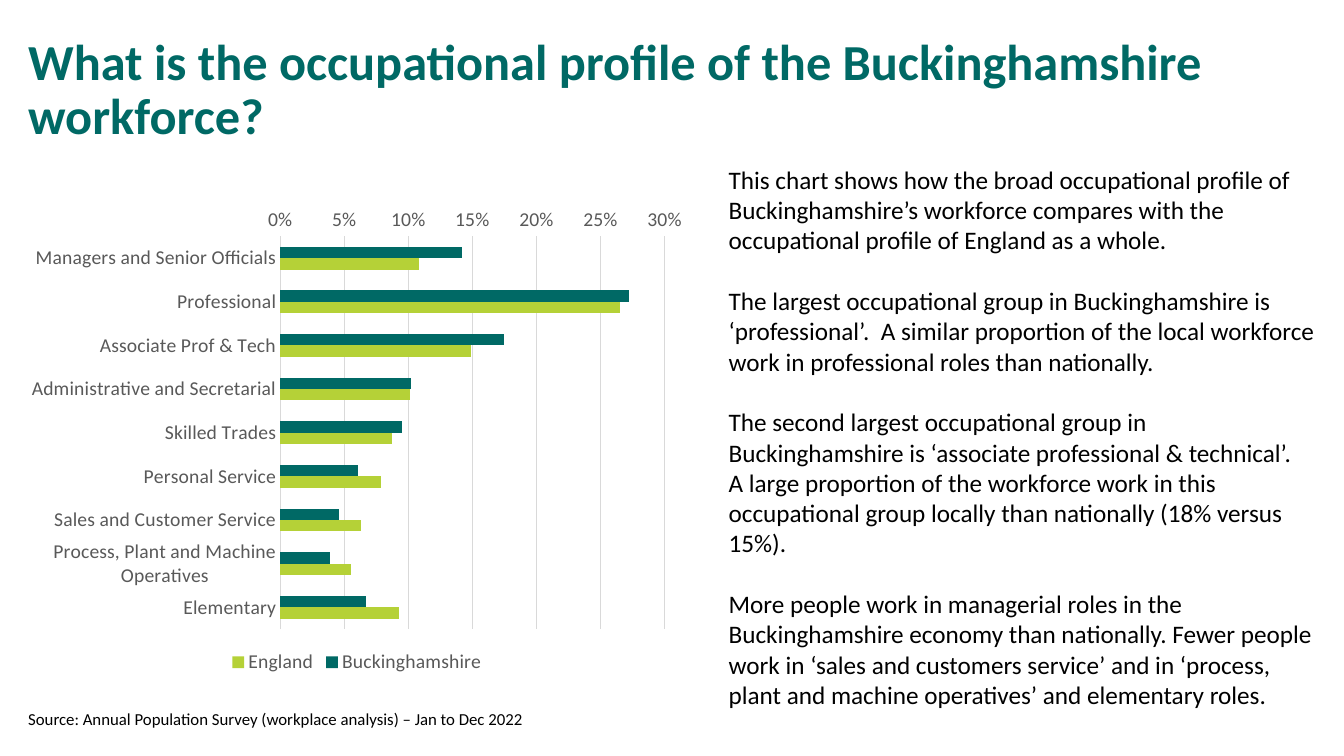
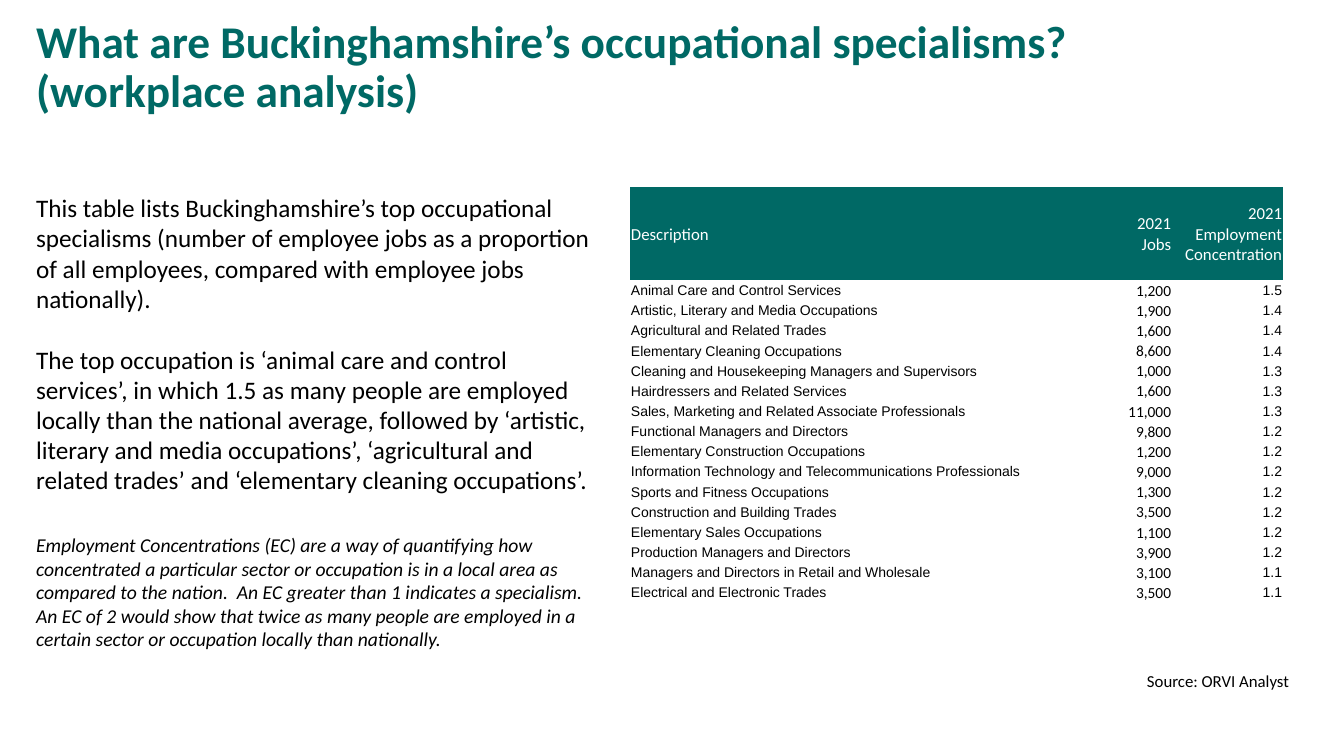
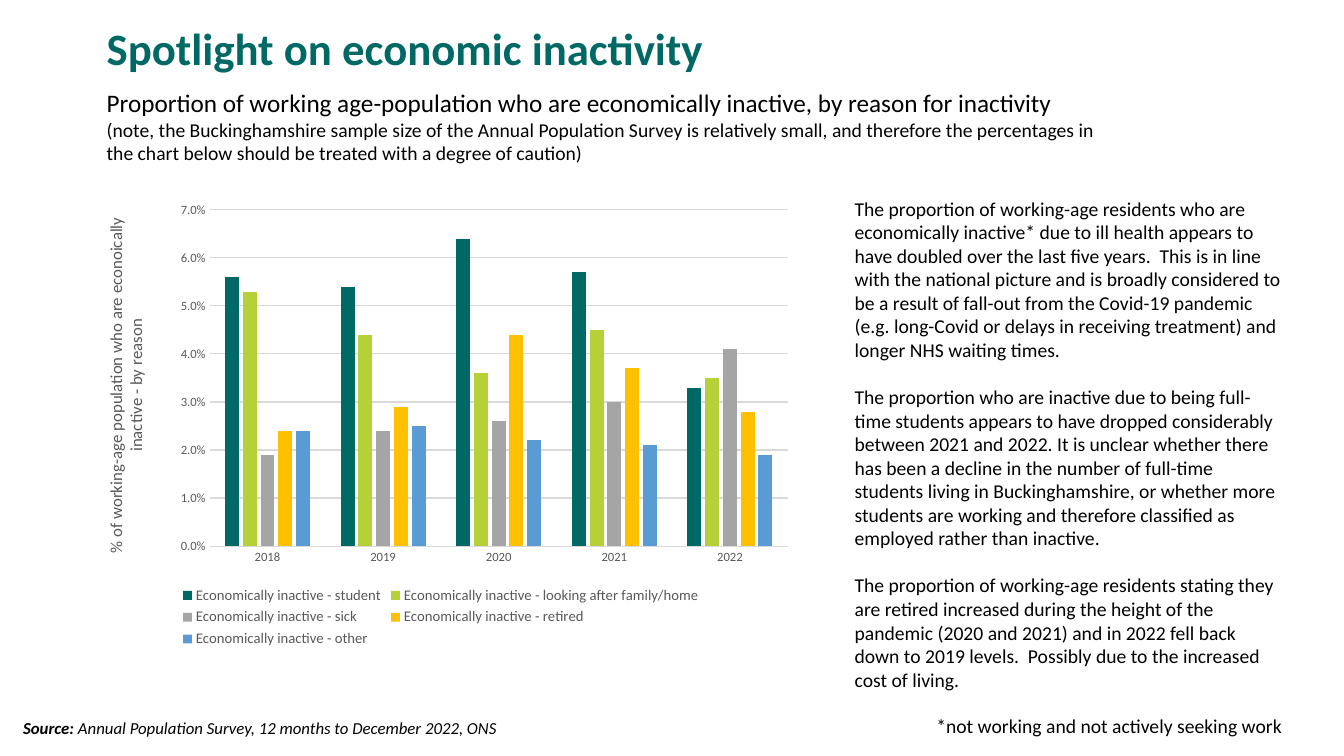
from lxml import etree
from pptx import Presentation
from pptx.chart.data import CategoryChartData
from pptx.dml.color import RGBColor
from pptx.enum import chart as charts, text
from pptx.util import Pt

TEAL, LIME, GREY, AMBER, BLUE = "006965", "B5D137", "A5A5A5", "FFC000", "5B9BD5"
BLACK, WHITE, LABEL, RULE = "000000", "FFFFFF", "595959", "D9D9D9"
FONT, TABLE_FONT = "Calibri", "Arial"
NO_STYLE = "{2D5ABB26-0587-4C30-8999-92F81FD0307C}"
CHART_NS = "http://schemas.openxmlformats.org/drawingml/2006/chart"


def colour(value):
    return RGBColor.from_string(value)


def style_font(font, size, shade=BLACK, name=FONT, bold=False, italic=False):
    font.size, font.name, font.bold, font.italic = Pt(size), name, bold, italic
    font.color.rgb = colour(shade)


def add_span(para, words, size, **style):
    span = para.add_run()
    span.text = words
    style_font(span.font, size, **style)


# Text regions
def add_text(page, box, paras, size, gap=0, spacing=None, anchor=text.MSO_ANCHOR.TOP, **style):
    """Each paragraph is a list of (words, style changes) spans."""
    frame = page.shapes.add_textbox(*map(Pt, box)).text_frame
    frame.word_wrap, frame.vertical_anchor = True, anchor
    for number, spans in enumerate(paras):
        para = frame.paragraphs[0] if number == 0 else frame.add_paragraph()
        para.space_before = Pt(gap if number else 0)
        if spacing:
            para.line_spacing = spacing
        for words, changes in spans:
            add_span(para, words, **{"size": size, **style, **changes})
    return frame


def add_body(page, box, paras, size, **style):
    add_text(page, box, [[(words, {})] for words in paras], size, gap=1.21 * size, **style)


def add_title(page, box, lines, size):
    frame = add_text(page, box, [[(lines[0], {})]], size, spacing=0.9,
                     anchor=text.MSO_ANCHOR.MIDDLE, shade=TEAL, bold=True)
    for line in lines[1:]:
        para = frame.paragraphs[0]
        para.add_line_break()
        add_span(para, line, size, shade=TEAL, bold=True)


# Chart region
def set_layout(parent, index, **places):
    """Place a chart part by fractions of the chart area."""
    for old in parent.findall(f"{{{CHART_NS}}}layout"):
        parent.remove(old)
    layout = etree.Element(f"{{{CHART_NS}}}layout")
    manual = etree.SubElement(layout, f"{{{CHART_NS}}}manualLayout")
    for tag, value in places.items():
        etree.SubElement(manual, f"{{{CHART_NS}}}{tag}", val=str(value))
    parent.insert(index, layout)


def add_bars(page, box, kind, categories, series, top, step, number_format,
             label_size, legend_size, gap, overlap=None):
    data = CategoryChartData(number_format=number_format)
    data.categories = categories
    for name, values, _ in series:
        data.add_series(name, values)
    chart = page.shapes.add_chart(kind, *map(Pt, box), data).chart
    style_font(chart.font, label_size)
    chart.has_title = False
    chart.has_legend = True
    chart.legend.position = charts.XL_LEGEND_POSITION.BOTTOM
    chart.legend.include_in_layout = False
    style_font(chart.legend.font, legend_size, LABEL)

    plot = chart.plots[0]
    plot.vary_by_categories, plot.gap_width = False, gap
    if overlap is not None:
        plot.overlap = overlap
    for bars, (_, _, shade) in zip(plot.series, series):
        bars.format.fill.solid()
        bars.format.fill.fore_color.rgb = colour(shade)
        bars.invert_if_negative = False

    for axis in (chart.category_axis, chart.value_axis):
        axis.major_tick_mark = axis.minor_tick_mark = charts.XL_TICK_MARK.NONE
        style_font(axis.tick_labels.font, label_size, LABEL)
    values_axis = chart.value_axis
    values_axis.minimum_scale, values_axis.maximum_scale = 0, top
    values_axis.major_unit = step
    values_axis.tick_labels.number_format = number_format
    values_axis.tick_labels.number_format_is_linked = False
    values_axis.format.line.fill.background()
    for line in (chart.category_axis.format.line, values_axis.major_gridlines.format.line):
        line.color.rgb, line.width = colour(RULE), Pt(0.75)
    return chart


def add_axis_title(chart, words):
    frame = chart.value_axis.axis_title.text_frame
    add_span(frame.paragraphs[0], words, 12, shade=LABEL)
    title = chart.element.xpath(".//c:valAx/c:title")[0]
    turn = title.xpath(".//a:bodyPr")[0]
    turn.set("rot", "-5400000")
    turn.set("vert", "horz")
    set_layout(title, 1, xMode="edge", yMode="edge", x=0.03, y=0.05)
    set_layout(chart.element.xpath(".//c:plotArea")[0], 0, layoutTarget="inner",
               xMode="edge", yMode="edge", x=0.18, y=0.04, w=0.8, h=0.73)


# Table region
def add_jobs_table(page, box, header, rows):
    left, top, width, height = box
    frame = page.shapes.add_table(len(rows) + 1, len(header), *map(Pt, box))
    frame.element.xpath(".//a:tableStyleId")[0].text = NO_STYLE
    table = frame.table
    table.first_row = table.horz_banding = False
    number_widths = (48.2, 79.2)
    for column, size in zip(table.columns, (width - sum(number_widths), *number_widths)):
        column.width = Pt(size)
    row_height = 14.4
    for number, values in enumerate((header, *rows)):
        table.rows[number].height = Pt(row_height if number else height - row_height * len(rows))
        for place, words in enumerate(values):
            cell = table.cell(number, place)
            cell.margin_left = cell.margin_right = cell.margin_top = Pt(0.72)
            cell.margin_bottom = 0
            cell.vertical_anchor = text.MSO_ANCHOR.MIDDLE
            para = cell.text_frame.paragraphs[0]
            if place:
                para.alignment = text.PP_ALIGN.RIGHT
            if number == 0:
                cell.fill.solid()
                cell.fill.fore_color.rgb = colour(TEAL)
                add_span(para, words, 12, shade=WHITE)
                continue
            cell.fill.background()
            if place == 1:
                cell.vertical_anchor = text.MSO_ANCHOR.BOTTOM
                add_span(para, words, 11)
            else:
                add_span(para, words, 10, name=TABLE_FONT)


# Slides
def build_profile(page):
    add_title(page, (13, 13, 929, 104.4),
              ["What is the occupational profile of the Buckinghamshire workforce?"], 36)
    groups = ["Managers and Senior Officials", "Professional", "Associate Prof & Tech",
              "Administrative and Secretarial", "Skilled Trades", "Personal Service",
              "Sales and Customer Service", "Process, Plant and Machine Operatives", "Elementary"]
    series = [
        ("Buckinghamshire", (0.142, 0.272, 0.175, 0.102, 0.095, 0.061, 0.046, 0.039, 0.067), TEAL),
        ("England", (0.108, 0.265, 0.149, 0.101, 0.087, 0.079, 0.063, 0.055, 0.093), LIME)]
    chart = add_bars(page, (13, 141.8, 483.8, 342.7), charts.XL_CHART_TYPE.BAR_CLUSTERED,
                     groups, series, 0.3, 0.05, "0%", 14, 14, gap=182)
    chart.category_axis.reverse_order = True
    add_body(page, (513.4, 113.8, 434.2, 399.6), [
        "This chart shows how the broad occupational profile of Buckinghamshire’s workforce "
        "compares with the occupational profile of England as a whole.",
        "The largest occupational group in Buckinghamshire is ‘professional’.  A similar "
        "proportion of the local workforce work in professional roles than nationally.",
        "The second largest occupational group in Buckinghamshire is ‘associate professional & "
        "technical’.  A large proportion of the workforce work in this occupational group "
        "locally than nationally (18% versus 15%).",
        "More people work in managerial roles in the Buckinghamshire economy than nationally. "
        "Fewer people work in ‘sales and customers service’ and in ‘process, plant and machine "
        "operatives’ and elementary roles."], 18)
    add_body(page, (13, 502.6, 454.3, 21.6),
             ["Source: Annual Population Survey (workplace analysis) – Jan to Dec 2022"], 12)


def build_specialisms(page):
    add_title(page, (18.7, 10.8, 923, 76.3),
              ["What are Buckinghamshire’s occupational specialisms?", "(workplace analysis)"], 32.4)
    add_jobs_table(page, (450, 133.9, 466.5, 296.6),
                   ("Description", "2021 Jobs", "2021 Employment Concentration"), [
        ("Animal Care and Control Services", "1,200", "1.5"),
        ("Artistic, Literary and Media Occupations", "1,900", "1.4"),
        ("Agricultural and Related Trades", "1,600", "1.4"),
        ("Elementary Cleaning Occupations", "8,600", "1.4"),
        ("Cleaning and Housekeeping Managers and Supervisors", "1,000", "1.3"),
        ("Hairdressers and Related Services", "1,600", "1.3"),
        ("Sales, Marketing and Related Associate Professionals", "11,000", "1.3"),
        ("Functional Managers and Directors", "9,800", "1.2"),
        ("Elementary Construction Occupations", "1,200", "1.2"),
        ("Information Technology and Telecommunications Professionals", "9,000", "1.2"),
        ("Sports and Fitness Occupations", "1,300", "1.2"),
        ("Construction and Building Trades", "3,500", "1.2"),
        ("Elementary Sales Occupations", "1,100", "1.2"),
        ("Production Managers and Directors", "3,900", "1.2"),
        ("Managers and Directors in Retail and Wholesale", "3,100", "1.1"),
        ("Electrical and Electronic Trades", "3,500", "1.1")])
    add_body(page, (18.7, 133.9, 409.7, 225.4), [
        "This table lists Buckinghamshire’s top occupational specialisms (number of employee "
        "jobs as a proportion of all employees, compared with employee jobs nationally).",
        "The top occupation is ‘animal care and control services’, in which 1.5 as many people "
        "are employed locally than the national average, followed by ‘artistic, literary and "
        "media occupations’, ‘agricultural and related trades’ and ‘elementary cleaning "
        "occupations’."], 18)
    add_body(page, (18.7, 377.3, 409.7, 92.2), [
        "Employment Concentrations (EC) are a way of quantifying how concentrated a particular "
        "sector or occupation is in a local area as compared to the nation.  An EC greater than "
        "1 indicates a specialism.  An EC of 2 would show that twice as many people are employed "
        "in a certain sector or occupation locally than nationally."], 14, italic=True)
    add_body(page, (812.2, 475.9, 144, 21.6), ["Source: ORVI Analyst"], 12)


def build_inactivity(page):
    add_title(page, (69.1, 7.2, 828, 58.3), ["Spotlight on economic inactivity"], 32)
    reasons = [
        ("student", (0.056, 0.054, 0.064, 0.057, 0.033), TEAL),
        ("looking after family/home", (0.053, 0.044, 0.036, 0.045, 0.035), LIME),
        ("sick", (0.019, 0.024, 0.026, 0.03, 0.041), GREY),
        ("retired", (0.024, 0.029, 0.044, 0.037, 0.028), AMBER),
        ("other", (0.024, 0.025, 0.022, 0.021, 0.019), BLUE)]
    series = [(f"Economically inactive - {name}", *rest) for name, *rest in reasons]
    chart = add_bars(page, (56.9, 136.8, 516.2, 329), charts.XL_CHART_TYPE.COLUMN_CLUSTERED,
                     [str(year) for year in range(2018, 2023)], series, 0.07, 0.01, "0.0%",
                     9, 10.5, gap=219, overlap=-27)
    add_axis_title(chart, "% of working-age population who are econoically inactive - by reason")
    add_body(page, (603.4, 136.8, 319.7, 363.6), [
        "The proportion of working-age residents who are economically inactive* due to ill "
        "health appears to have doubled over the last five years.  This is in line with the "
        "national picture and is broadly considered to be a result of fall-out from the Covid-19 "
        "pandemic (e.g. long-Covid or delays in receiving treatment) and longer NHS waiting times.",
        "The proportion who are inactive due to being full-time students appears to have dropped "
        "considerably between 2021 and 2022. It is unclear whether there has been a decline in "
        "the number of full-time students living in Buckinghamshire, or whether more students "
        "are working and therefore classified as employed rather than inactive.",
        "The proportion of working-age residents stating they are retired increased during the "
        "height of the pandemic (2020 and 2021) and in 2022 fell back down to 2019 levels.  "
        "Possibly due to the increased cost of living."], 14)
    add_text(page, (69.1, 59, 740.9, 63.4), [
        [("Proportion of working age-population who are economically inactive, by reason for "
          "inactivity", {"size": 18})],
        [("(note, the Buckinghamshire sample size of the Annual Population Survey is relatively "
          "small, and therefore the percentages in the chart below should be treated with a "
          "degree of caution)", {})]], 14)
    add_text(page, (9.4, 508.3, 491.8, 22.3), [
        [("Source:", {"bold": True}),
         (" Annual Population Survey, 12 months to December 2022, ONS", {})]],
        12, spacing=1.07, italic=True)
    add_body(page, (661.7, 506.2, 295, 24.5), ["*not working and not actively seeking work"], 14)


def main():
    deck = Presentation()
    deck.slide_width, deck.slide_height = Pt(960), Pt(540)
    for build in (build_profile, build_specialisms, build_inactivity):
        build(deck.slides.add_slide(deck.slide_layouts[6]))
    deck.save("out.pptx")


if __name__ == "__main__":
    main()
